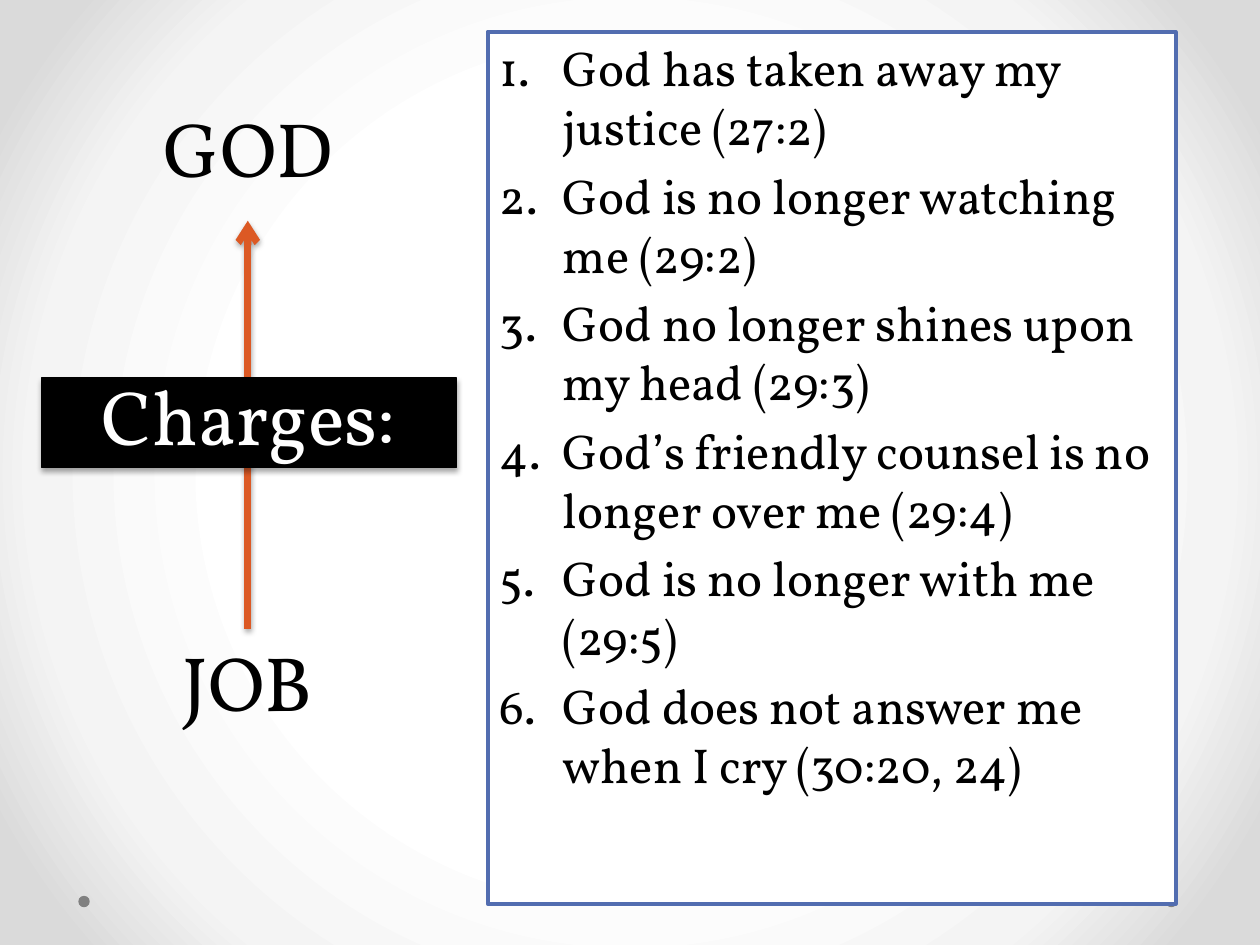
from lxml import etree
from pptx import Presentation
from pptx.dml.color import RGBColor
from pptx.enum.shapes import MSO_CONNECTOR, MSO_SHAPE
from pptx.enum.text import MSO_ANCHOR, MSO_AUTO_SIZE, PP_ALIGN
from pptx.oxml import parse_xml
from pptx.oxml.ns import qn
from pptx.util import Cm, Pt

RECT, OVAL = MSO_SHAPE.RECTANGLE, MSO_SHAPE.OVAL
STRAIGHT = MSO_CONNECTOR.STRAIGHT
CENTER, LEFT = PP_ALIGN.CENTER, PP_ALIGN.LEFT
TOP, BOTTOM = MSO_ANCHOR.TOP, MSO_ANCHOR.BOTTOM
NS = 'xmlns:a="http://schemas.openxmlformats.org/drawingml/2006/main"'
COLORS = {"black": "000000", "white": "FFFFFF", "pale": "F4F4F4",
          "edge": "DADADA", "dot": "808080", "arrow": "DC5924", "frame": "526DB0"}
CHARGES = [
    "God has taken away my justice (27:2)",
    "God is no longer watching me (29:2)",
    "God no longer shines upon my head (29:3)",
    "God’s friendly counsel is no longer over me (29:4)",
    "God is no longer with me (29:5)",
    "God does not answer me when I cry (30:20, 24)",
]


def rgb(name):
    return RGBColor.from_string(COLORS[name])


class SlideBuilder:
    font = "Vollkorn"
    title_size, list_size = Pt(44), Pt(28)

    def __init__(self, slide):
        self.slide = slide

    def background(self, stops):
        """Radial gradient from the middle outwards; stops are (percent, colour)."""
        self.slide.background.fill.gradient()
        grad = self.slide.background._cSld.find(".//" + qn("a:gradFill"))
        gs = "".join(f'<a:gs pos="{pos * 1000}"><a:srgbClr val="{COLORS[c]}"/></a:gs>'
                     for pos, c in stops)
        grad.getparent().replace(grad, parse_xml(
            f'<a:gradFill {NS} rotWithShape="1"><a:gsLst>{gs}</a:gsLst>'
            '<a:path path="circle"><a:fillToRect l="50000" t="50000" r="50000" b="50000"/>'
            '</a:path></a:gradFill>'))

    def add_shadow(self, effects):
        effects.append(parse_xml(
            f'<a:outerShdw {NS} blurRad="39370" dist="22860" dir="5400000" rotWithShape="0">'
            '<a:srgbClr val="000000"><a:alpha val="35000"/></a:srgbClr></a:outerShdw>'))

    def shape(self, kind, x, y, w, h, fill, line=None, width=0, shadow=False):
        s = self.slide.shapes.add_shape(kind, Cm(x), Cm(y), Cm(w), Cm(h))
        s.shadow.inherit = False
        s.fill.solid()
        s.fill.fore_color.rgb = rgb(fill)
        if line:
            s.line.color.rgb = rgb(line)
            s.line.width = Pt(width)
        else:
            s.line.fill.background()
        if shadow:
            self.add_shadow(s._element.spPr.find(qn("a:effectLst")))
        return s

    def paragraph(self, p, text, size, color="black", align=CENTER):
        p.text = text
        p.alignment = align
        p.font.name, p.font.size = self.font, size
        p.font.color.rgb = rgb(color)

    def label(self, text, x, y, w, h):
        s = self.slide.shapes.add_textbox(Cm(x), Cm(y), Cm(w), Cm(h))
        s.text_frame.word_wrap = False
        s.text_frame.auto_size = MSO_AUTO_SIZE.SHAPE_TO_FIT_TEXT
        self.paragraph(s.text_frame.paragraphs[0], text, self.title_size)
        return s

    def arrow_up(self, source, x, y1, y2, color, width):
        c = self.slide.shapes.add_connector(STRAIGHT, Cm(x), Cm(y1), Cm(x), Cm(y2))
        c.begin_connect(source, 0)
        c.end_x = c.begin_x
        c.line.color.rgb = rgb(color)
        c.line.width = Pt(width)
        etree.SubElement(c.line._get_or_add_ln(), qn("a:tailEnd"), type="arrow")
        self.add_shadow(etree.SubElement(c._element.spPr, qn("a:effectLst")))

    def banner(self, text, x, y, w, h):
        s = self.shape(RECT, x, y, w, h, "black", "black", 0.75, shadow=True)
        s.text_frame.vertical_anchor = BOTTOM
        self.paragraph(s.text_frame.paragraphs[0], text, self.title_size, "white")

    def numbered_list(self, items, x, y, w, h):
        tf = self.shape(RECT, x, y, w, h, "white", "frame", 2.25).text_frame
        tf.word_wrap = True
        tf.vertical_anchor = TOP
        for i, item in enumerate(items):
            p = tf.add_paragraph() if i else tf.paragraphs[0]
            self.paragraph(p, item, self.list_size, align=LEFT)
            p.space_before = Pt(5.6)
            pPr = p._p.get_or_add_pPr()
            pPr.set("marL", str(Cm(1.27)))
            pPr.set("indent", str(-Cm(1.27)))
            numbers = etree.Element(qn("a:buAutoNum"), type="arabicPeriod")
            pPr.find(qn("a:spcBef")).addnext(numbers)


def main():
    prs = Presentation()
    prs.slide_width, prs.slide_height = Cm(25.4), Cm(19.05)
    b = SlideBuilder(prs.slides.add_slide(prs.slide_layouts[6]))

    # Backdrop with its two corner dots
    b.background([(50, "white"), (76, "pale"), (92, "edge")])
    for x in (23.5, 1.58):
        b.shape(OVAL, x, 18.06, 0.23, 0.23, "dot")

    # Job's charges rising to God
    job = b.label("JOB", 3.38, 12.67, 3.23, 2.13)
    b.label("GOD", 2.92, 1.9, 4.17, 2.13)
    b.arrow_up(job, 5, 12.67, 4.45, "arrow", 4)
    b.banner("Charges:", 0.84, 7.62, 8.36, 1.8)

    # List of charges
    b.numbered_list(CHARGES, 9.83, 0.64, 13.87, 17.58)

    prs.save("out.pptx")


if __name__ == "__main__":
    main()
